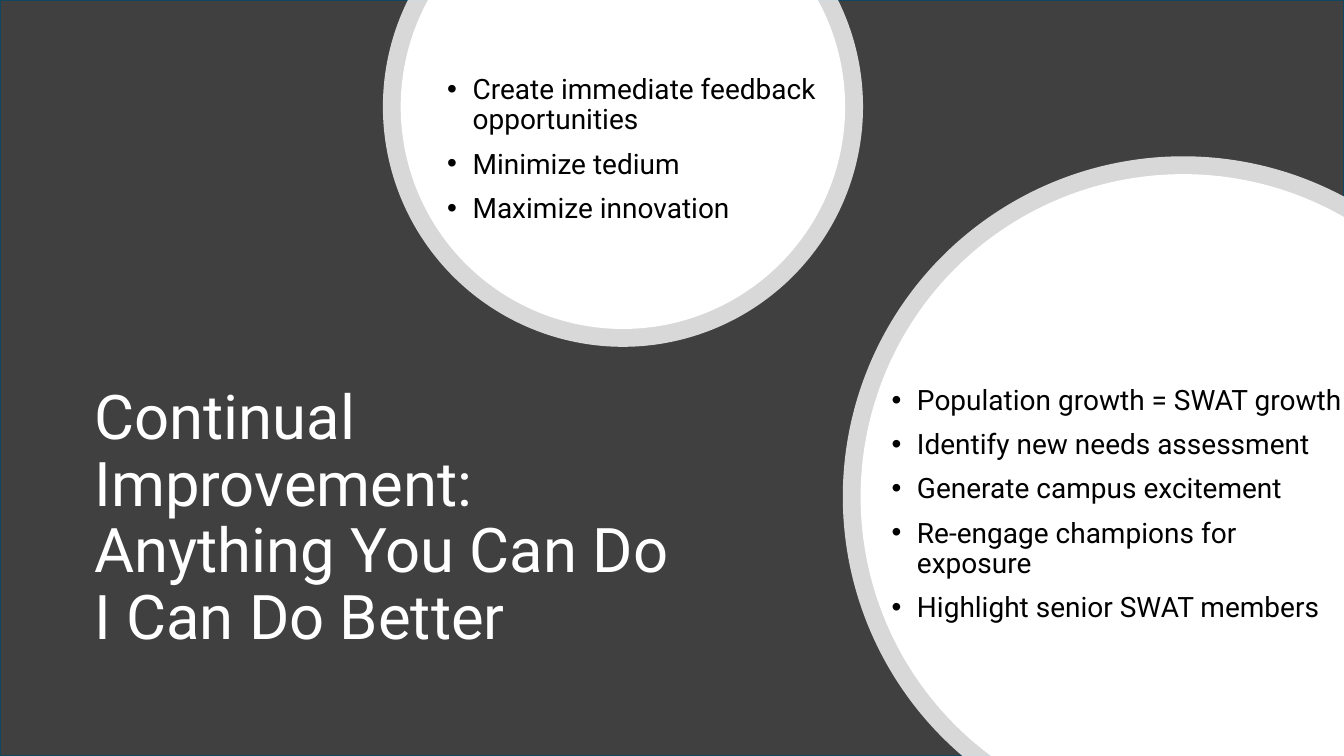
from math import acos, asin, cos, degrees, radians, sin

from lxml.etree import SubElement
from pptx import Presentation
from pptx.dml.color import RGBColor
from pptx.enum.shapes import MSO_SHAPE
from pptx.enum.text import MSO_ANCHOR, PP_ALIGN
from pptx.oxml.ns import qn
from pptx.util import Cm, Pt

TITLE = "Continual Improvement:\vAnything You Can Do\vI Can Do Better"
TITLE_BOX = (2.13, 9.73, 16.7, 6.73)

# Lengths in cm: box is left, top, width, height
BUBBLES = [
    {
        "center": (15.7, 2.69), "radius": 6.05, "cut": "top",
        "box": (11.02, 1.65, 10.01, 4.98), "text_top": 0.25,
        "items": [
            "Create immediate feedback opportunities",
            "Minimize tedium",
            "Maximize innovation",
        ],
    },
    {
        "center": (29.82, 12.52), "radius": 8.58, "cut": "bottom right",
        "box": (22.22, 9.22, 11.87, 7.72), "text_top": 0.51,
        "items": [
            "Population growth = SWAT growth",
            "Identify new needs assessment",
            "Generate campus excitement",
            "Re-engage champions for exposure",
            "Highlight senior SWAT members",
        ],
    },
]

COLORS = {"backdrop": "404040", "border": "104760", "white": "FFFFFF", "black": "000000"}
FONT = "Roboto"
SLIDE_WIDTH, SLIDE_HEIGHT = 33.87, 19.05
RING_WIDTH = 0.45
RING_ALPHA = 80
BULLET_INDENT = 0.64


def color(name):
    return RGBColor.from_string(COLORS[name])


def arc_angles(center, radius, cut):
    """Return the clockwise start and end angles of the arc inside the slide."""
    center_x, center_y = center
    if cut == "top":
        start = degrees(asin(-center_y / radius))
        return start, 180 - start
    start = 180 - degrees(asin((SLIDE_HEIGHT - center_y) / radius))
    return start, 360 - degrees(acos((SLIDE_WIDTH - center_x) / radius))


def add_clipped_circle(slide, center, radius, cut, alpha=100):
    """Draw a white circle cut off at the slide edges."""
    center_x, center_y = center
    left, top = center_x - radius, max(center_y - radius, 0)
    right = min(center_x + radius, SLIDE_WIDTH)
    bottom = min(center_y + radius, SLIDE_HEIGHT)
    builder = slide.shapes.build_freeform(Cm(left), Cm(top))
    builder.add_line_segments(
        [(Cm(right), Cm(top)), (Cm(right), Cm(bottom)), (Cm(left), Cm(bottom))])
    shape = builder.convert_to_shape()

    outline = next(shape._element.iter(qn("a:path")))
    for segment in list(outline):
        outline.remove(segment)

    def add_point(tag, x, y):
        SubElement(SubElement(outline, qn(tag)), qn("a:pt"),
                   x=str(Cm(x - left)), y=str(Cm(y - top)))

    start, end = arc_angles(center, radius, cut)
    add_point("a:moveTo", center_x + radius * cos(radians(start)),
              center_y + radius * sin(radians(start)))
    SubElement(outline, qn("a:arcTo"), wR=str(Cm(radius)), hR=str(Cm(radius)),
               stAng=str(round(start % 360 * 60000)),
               swAng=str(round((end - start) * 60000)))
    if cut == "bottom right":
        add_point("a:lnTo", right, bottom)
    SubElement(outline, qn("a:close"))

    shape.shadow.inherit = False
    shape.fill.solid()
    shape.fill.fore_color.rgb = color("white")
    shape.line.fill.background()
    if alpha < 100:
        fill_color = next(shape._element.iter(qn("a:srgbClr")))
        SubElement(fill_color, qn("a:alpha"), val=str(alpha * 1000))


def add_text(slide, box, lines, size, color_name, anchor, bulleted=False):
    frame = slide.shapes.add_textbox(*map(Cm, box)).text_frame
    frame.word_wrap = True
    frame.vertical_anchor = anchor
    frame.text = "\n".join(lines)
    for paragraph in frame.paragraphs:
        paragraph.alignment = PP_ALIGN.LEFT
        paragraph.line_spacing = 0.9
        if bulleted:
            add_bullet(paragraph)
        paragraph.font.name = FONT
        paragraph.font.size = Pt(size)
        paragraph.font.color.rgb = color(color_name)
    return frame


def add_bullet(paragraph):
    properties = paragraph._p.get_or_add_pPr()
    properties.set("marL", str(Cm(BULLET_INDENT)))
    properties.set("indent", str(-Cm(BULLET_INDENT)))
    SubElement(properties, qn("a:buFont"), typeface="Arial")
    SubElement(properties, qn("a:buChar"), char="•")


def add_bullet_list(slide, bubble):
    frame = add_text(slide, bubble["box"], bubble["items"], 20, "black",
                     MSO_ANCHOR.TOP, bulleted=True)
    frame.margin_top = Cm(bubble["text_top"])
    for paragraph in frame.paragraphs[1:]:
        paragraph.space_before = Pt(10)


def main():
    presentation = Presentation()
    presentation.slide_width = Cm(SLIDE_WIDTH)
    presentation.slide_height = Cm(SLIDE_HEIGHT)
    slide = presentation.slides.add_slide(presentation.slide_layouts[6])

    backdrop = slide.shapes.add_shape(
        MSO_SHAPE.RECTANGLE, 0, 0, Cm(SLIDE_WIDTH), Cm(SLIDE_HEIGHT))
    backdrop.shadow.inherit = False
    backdrop.fill.solid()
    backdrop.fill.fore_color.rgb = color("backdrop")
    backdrop.line.color.rgb = color("border")
    backdrop.line.width = Pt(1.5)

    for bubble in BUBBLES:
        center, radius, cut = bubble["center"], bubble["radius"], bubble["cut"]
        add_clipped_circle(slide, center, radius, cut, RING_ALPHA)
        add_clipped_circle(slide, center, radius - RING_WIDTH, cut)
        add_bullet_list(slide, bubble)

    add_text(slide, TITLE_BOX, [TITLE], 44, "white", MSO_ANCHOR.MIDDLE)
    presentation.save("out.pptx")


if __name__ == "__main__":
    main()
